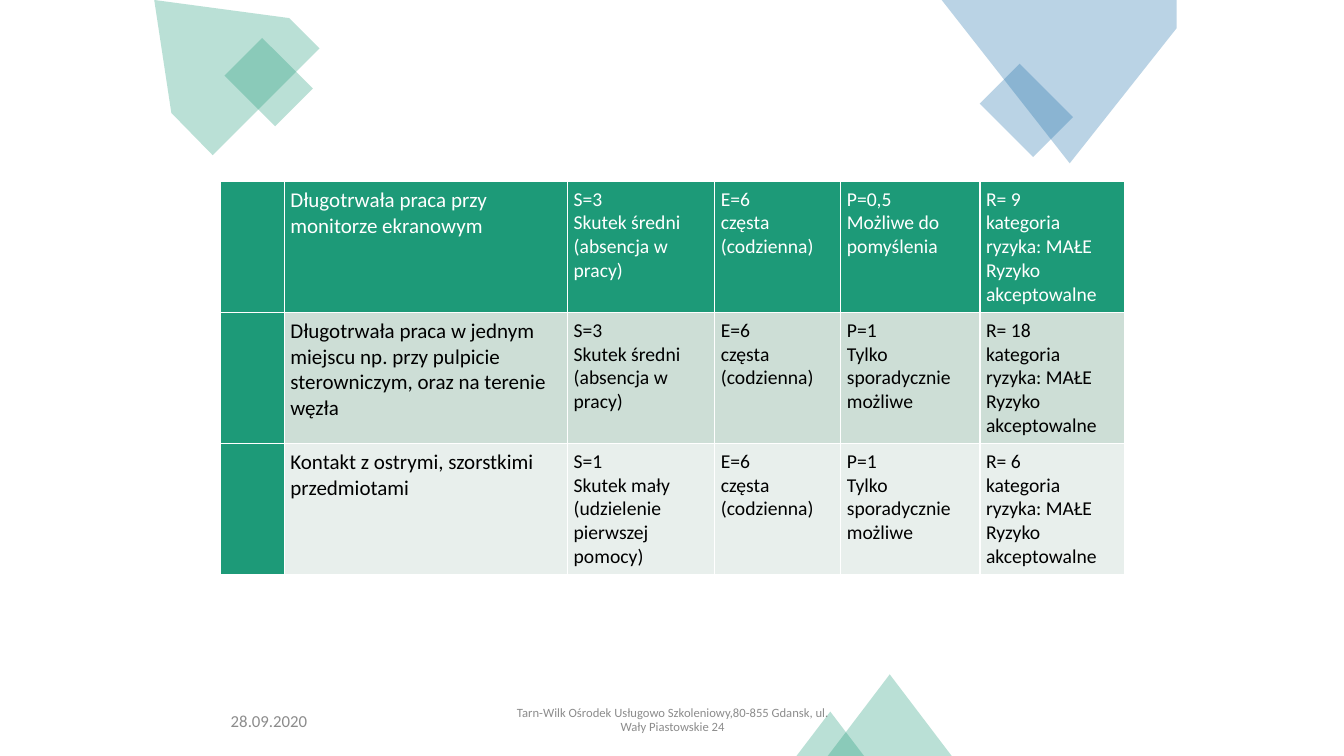
"""Builds a risk assessment slide: a table of hazards among translucent shapes."""
from lxml.etree import SubElement
from pptx import Presentation
from pptx.dml.color import RGBColor
from pptx.enum.shapes import MSO_SHAPE
from pptx.enum.text import MSO_ANCHOR, PP_ALIGN
from pptx.oxml.ns import qn
from pptx.util import Inches, Pt

GREEN, BLUE, GREY, WHITE, BLACK = "1D9A78", "1D6FA9", "8C8C8C", "FFFFFF", "000000"
FONT = "Calibri"

DATE = "28.09.2020"
ORGANISER = ("Tarn-Wilk Ośrodek Usługowo Szkoleniowy,80-855 Gdansk, "
             "ul. Wały Piastowskie 24")

MEDIUM_EFFECT = ["S=3", "Skutek średni", "(absencja w pracy)"]
SMALL_EFFECT = ["S=1", "Skutek mały", "(udzielenie pierwszej pomocy)"]
DAILY = ["E=6", "częsta (codzienna)"]
CONCEIVABLE = ["P=0,5", "Możliwe do pomyślenia"]
SPORADIC = ["P=1", "Tylko sporadycznie możliwe"]
SMALL_RISK = ["kategoria ryzyka: MAŁE", "Ryzyko akceptowalne"]

HAZARDS = [
    ("Długotrwała praca przy monitorze ekranowym",
     MEDIUM_EFFECT, DAILY, CONCEIVABLE, "R= 9"),
    ("Długotrwała praca w jednym miejscu np. przy pulpicie sterowniczym, "
     "oraz na terenie węzła",
     MEDIUM_EFFECT, DAILY, SPORADIC, "R= 18"),
    ("Kontakt z ostrymi, szorstkimi przedmiotami",
     SMALL_EFFECT, DAILY, SPORADIC, "R= 6"),
]
ROW_COLOURS = [(GREEN, WHITE), ("CDDED6", BLACK), ("E8EFEC", BLACK)]
COLUMN_WIDTHS = [0.63, 2.81, 1.46, 1.25, 1.38, 1.43]
ROW_HEIGHT = 1.3

OUTLINES = [
    (GREEN, [(2.87, 0.18), (1.53, 0), (1.7, 1.12), (2.11, 1.54), (3.17, 0.48)]),
    (BLUE, [(11.67, 0), (9.34, 0), (10.61, 1.62), (11.67, 0.28)]),
]
PRESETS = [
    (MSO_SHAPE.RECTANGLE, GREEN, (2.4, 0.46, 0.53, 0.71), 315),
    (MSO_SHAPE.RECTANGLE, BLUE, (9.9, 0.72, 0.56, 0.75), 315),
    (MSO_SHAPE.ISOSCELES_TRIANGLE, GREEN, (8.21, 6.69, 1.23, 0.81), 0),
    (MSO_SHAPE.ISOSCELES_TRIANGLE, GREEN, (7.9, 7.06, 0.67, 0.44), 0),
]


def paint(fill, colour):
    fill.solid()
    fill.fore_color.rgb = RGBColor.from_string(colour)


def make_translucent(shape, colour):
    paint(shape.fill, colour)
    hue = shape._element.spPr.find(qn("a:solidFill"))[0]
    SubElement(hue, qn("a:alpha"), val="30000")
    shape.line.fill.background()
    shape.shadow.inherit = False


def style(paragraph, size, colour):
    paragraph.font.size = Pt(size)
    paragraph.font.name = FONT
    paint(paragraph.font.fill, colour)


def add_footer(slide, text, left, width, size, align, spacing):
    box = slide.shapes.add_textbox(
        Inches(left), Inches(6.95), Inches(width), Inches(0.4))
    frame = box.text_frame
    frame.word_wrap = True
    frame.vertical_anchor = MSO_ANCHOR.MIDDLE
    paragraph = frame.paragraphs[0]
    paragraph.text = text
    paragraph.alignment = align
    paragraph.line_spacing = spacing
    paragraph.space_after = Pt(6)
    style(paragraph, size, GREY)


def fill_cell(cell, lines, size, background, colour):
    properties = cell._tc.get_or_add_tcPr()
    for side in ("a:lnL", "a:lnR", "a:lnT", "a:lnB"):
        border = SubElement(properties, qn(side), w=str(Pt(1)))
        SubElement(SubElement(border, qn("a:solidFill")), qn("a:srgbClr"), val=WHITE)
    paint(cell.fill, background)
    cell.margin_left = cell.margin_right = Inches(0.06)
    cell.margin_top = cell.margin_bottom = Inches(0.06)
    cell.text = "\n".join(lines)
    for paragraph in cell.text_frame.paragraphs:
        style(paragraph, size, colour)


def add_hazard_table(slide):
    table = slide.shapes.add_table(
        len(HAZARDS), len(COLUMN_WIDTHS), Inches(2.19), Inches(1.8),
        Inches(sum(COLUMN_WIDTHS)), Inches(ROW_HEIGHT * len(HAZARDS))).table
    table.first_row = table.horz_banding = False
    for column, width in zip(table.columns, COLUMN_WIDTHS):
        column.width = Inches(width)
    for row, hazard, (background, colour) in zip(table.rows, HAZARDS, ROW_COLOURS):
        row.height = Inches(ROW_HEIGHT)
        name, effect, exposure, probability, risk = hazard
        number, title, *ratings = row.cells
        fill_cell(number, [], 14, GREEN, WHITE)
        fill_cell(title, [name], 15, background, colour)
        for cell, lines in zip(ratings, (effect, exposure, probability,
                                         [risk, *SMALL_RISK])):
            fill_cell(cell, lines, 14, background, colour)


def main():
    deck = Presentation()
    deck.slide_width, deck.slide_height = Inches(13.33), Inches(7.5)
    slide = deck.slides.add_slide(deck.slide_layouts[6])
    for colour, corners in OUTLINES:
        start, *others = [(Inches(x), Inches(y)) for x, y in corners]
        outline = slide.shapes.build_freeform(*start)
        outline.add_line_segments(others, close=True)
        make_translucent(outline.convert_to_shape(), colour)
    for preset, colour, place, rotation in PRESETS:
        shape = slide.shapes.add_shape(preset, *map(Inches, place))
        shape.rotation = rotation
        make_translucent(shape, colour)
    add_footer(slide, DATE, 2.19, 2.25, 12, PP_ALIGN.LEFT, 1.0)
    add_footer(slide, ORGANISER, 4.98, 3.38, 9, PP_ALIGN.CENTER, 0.9)
    add_hazard_table(slide)
    deck.save("out.pptx")


if __name__ == "__main__":
    main()
